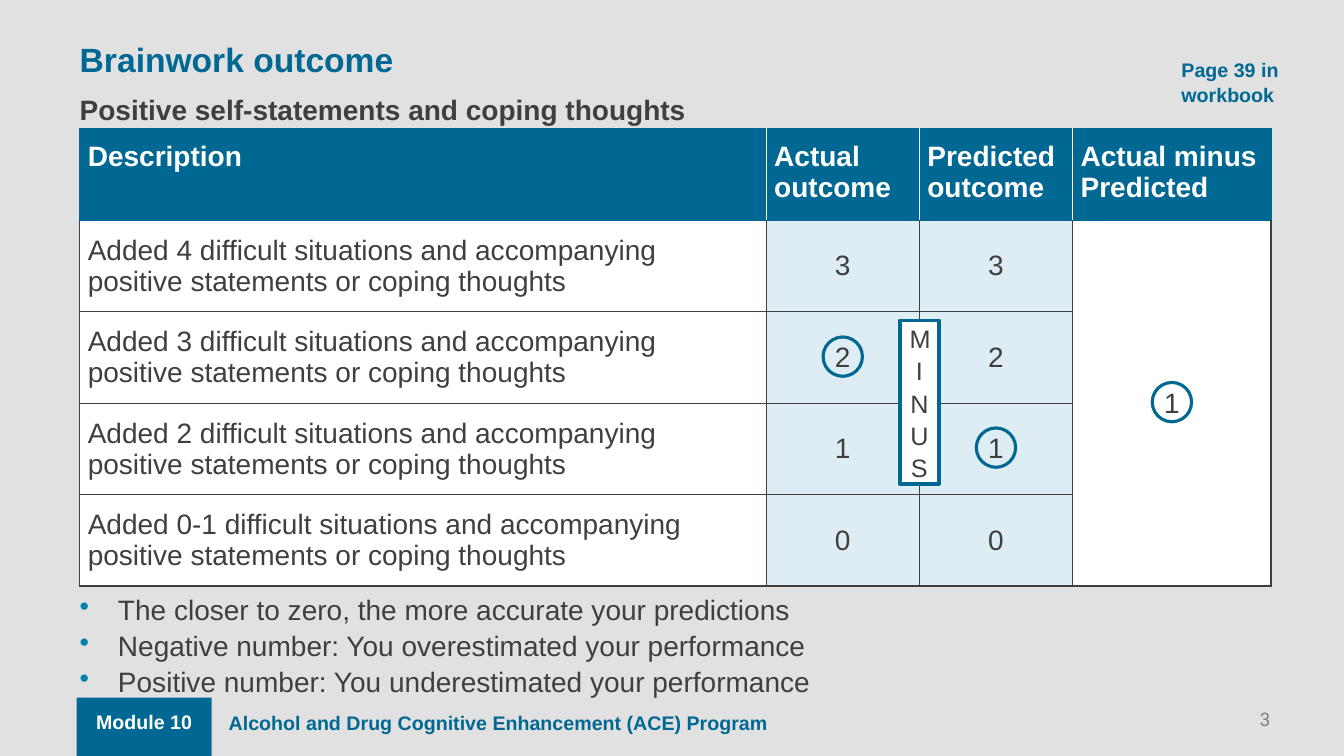
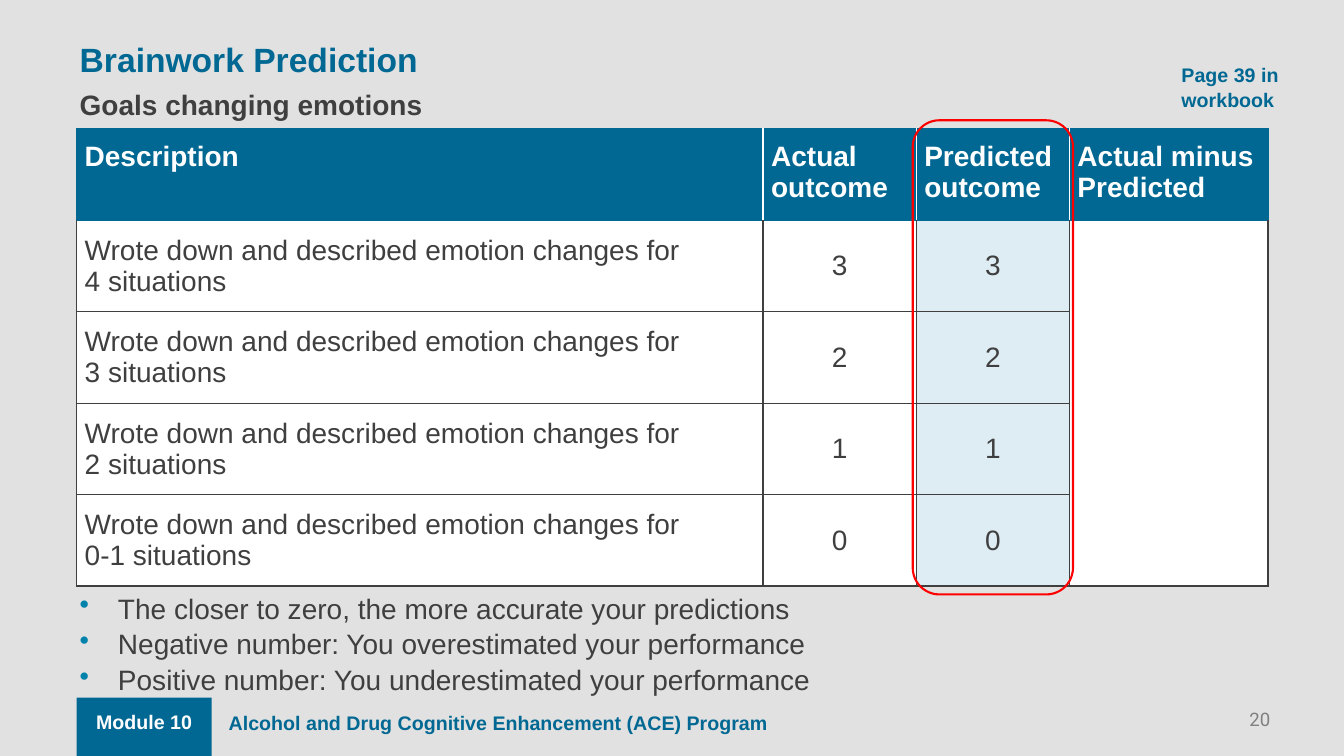
from dataclasses import dataclass
from itertools import accumulate

from lxml import etree
from pptx import Presentation
from pptx.dml.color import RGBColor
from pptx.enum.shapes import MSO_SHAPE as Shape
from pptx.enum.text import MSO_ANCHOR as Anchor, PP_ALIGN as Align
from pptx.oxml.ns import qn
from pptx.util import Inches, Pt

# Shared style
BLUE, BULLET, INK, GREY = "006892", "0082AA", "3F3F3F", "808080"
WHITE, TINT, RED, PAPER = "FFFFFF", "DEEDF3", "FF0000", "E1E1E1"
FONT, NUMBER_FONT = "Arial", "Roboto"
SLIDE_W, SLIDE_H = Inches(13.33), Inches(7.5)
LEFT, BAND_LEFT = 5.93, 5.7  # percent of the slide width
LOOSE = 1.07  # line spacing outside tables
COLUMNS = (6.81, 1.52, 1.52, 1.97)  # relative widths
HEADINGS = ("Description", "Actual outcome", "Predicted outcome",
            "Actual minus Predicted")
ACTUAL, PREDICTED, DIFFERENCE = 1, 2, 3
NOTES = ("The closer to zero, the more accurate your predictions",
         "Negative number: You overestimated your performance",
         "Positive number: You underestimated your performance")


@dataclass
class Box:
    x: int
    y: int
    w: int
    h: int

    def inner(self, x, y, w, h):
        """Sub-box in percent of this box."""
        return Box(int(self.x + self.w * x / 100), int(self.y + self.h * y / 100),
                   int(self.w * w / 100), int(self.h * h / 100))

    def place(self):
        return self.x, self.y, self.w, self.h


PAGE = Box(0, 0, SLIDE_W, SLIDE_H)


def rgb(color):
    return RGBColor.from_string(color)


def add_run(p, text, size, color=INK, bold=False, font=FONT):
    r = p.add_run()
    r.text = text
    r.font.size, r.font.bold, r.font.name = Pt(size), bold, font
    r.font.color.rgb = rgb(color)


def set_margins(target, side, top):
    target.margin_left = target.margin_right = Inches(side)
    target.margin_top = target.margin_bottom = Inches(top)


def add_text(slide, box, text, size, color=INK, bold=False, font=FONT,
             align=Align.LEFT, anchor=Anchor.TOP, margins=(0.1, 0.05), before=0):
    tf = slide.shapes.add_textbox(*box.place()).text_frame
    tf.word_wrap, tf.vertical_anchor = True, anchor
    set_margins(tf, *margins)
    p = tf.paragraphs[0]
    p.alignment, p.line_spacing, p.space_before = align, LOOSE, Pt(before)
    add_run(p, text, size, color, bold, font)


def add_outline(slide, kind, box, line=None, width=0, fill=None):
    sp = slide.shapes.add_shape(kind, *box.place())
    sp.shadow.inherit = False
    if fill:
        sp.fill.solid()
        sp.fill.fore_color.rgb = rgb(fill)
    else:
        sp.fill.background()
    if line:
        sp.line.color.rgb, sp.line.width = rgb(line), Pt(width)
    else:
        sp.line.fill.background()
    return sp


# Header and footer
def add_header(slide, box, title, subtitle, subtitle_y, page_ref_y):
    add_text(slide, box.inner(LEFT, 4.53, 66.9, 6.27), title, 24, BLUE, True,
             anchor=Anchor.MIDDLE, margins=(0, 0), before=8)
    add_text(slide, box.inner(LEFT, subtitle_y, 55, 5.87), subtitle, 20, bold=True,
             margins=(0, 0.05))
    add_text(slide, box.inner(87.17, page_ref_y, 10.35, 7.6), "Page 39 in workbook",
             14, BLUE, True)


def add_footer(slide, box, number):
    add_outline(slide, Shape.RECTANGLE, box.inner(BAND_LEFT, 92.27, 10.05, 7.73),
                fill=BLUE)
    add_text(slide, box.inner(16.28, 93.2, 60, 6.27),
             "Alcohol and Drug Cognitive Enhancement (ACE) Program",
             14, BLUE, True, before=8)
    add_text(slide, box.inner(BAND_LEFT, 93.07, 10.05, 4.53), "Module 10",
             14, WHITE, True, align=Align.CENTER, before=8)
    add_text(slide, box.inner(79.52, 93.47, 15, 2.67), str(number), 13.3, GREY,
             font=NUMBER_FONT, align=Align.RIGHT, margins=(0, 0))


# Bulleted notes
def add_notes(slide, box):
    tf = slide.shapes.add_textbox(*box.place()).text_frame
    tf.word_wrap = True
    set_margins(tf, 0, 0)
    for i, note in enumerate(NOTES):
        p = tf.add_paragraph() if i else tf.paragraphs[0]
        p.line_spacing = LOOSE
        pPr = p._p.get_or_add_pPr()
        pPr.set("marL", str(Inches(0.38)))
        pPr.set("indent", str(-Inches(0.38)))
        bullet_color = etree.SubElement(pPr, qn("a:buClr"))
        etree.SubElement(bullet_color, qn("a:srgbClr"), val=BULLET)
        etree.SubElement(pPr, qn("a:buChar"), char="•")
        add_run(p, note, 20)


# Outcome table
def set_borders(cell, left, right, top, bottom):
    tcPr = cell._tc.get_or_add_tcPr()
    for side, color in zip("LRTB", (left, right, top, bottom)):
        ln = etree.SubElement(tcPr, qn(f"a:ln{side}"), w=str(Pt(1)))
        fill = etree.SubElement(ln, qn("a:solidFill"))
        etree.SubElement(fill, qn("a:srgbClr"), val=color)


def style_cell(cell, row, col, tinted):
    if row == 0:
        set_borders(cell, WHITE if col else BLUE,
                    WHITE if col < DIFFERENCE else BLUE, BLUE, BLUE)
    else:
        set_borders(cell, INK, INK, BLUE if row == 1 else INK, INK)
        cell.vertical_anchor = Anchor.MIDDLE
    set_margins(cell, 0.08, 0.12)
    cell.fill.solid()
    cell.fill.fore_color.rgb = rgb(
        BLUE if row == 0 else TINT if col in tinted else WHITE)


def fill_cell(cell, text, row, col):
    p = cell.text_frame.paragraphs[0]
    p.alignment = Align.CENTER if row and col else Align.LEFT
    for i, line in enumerate(text.split("\n")):
        if i:
            p.add_line_break()
        add_run(p, line, 20, INK if row else WHITE, row == 0)


def add_outcomes(slide, box, descriptions, tinted, difference=""):
    scores = range(len(descriptions) - 1, -1, -1)
    rows = [HEADINGS] + [(d, str(s), str(s), "")
                         for d, s in zip(descriptions, scores)]
    rows[1] = rows[1][:DIFFERENCE] + (difference,)
    table = slide.shapes.add_table(len(rows), len(COLUMNS), *box.place()).table
    table.horz_banding = False
    for column, share in zip(table.columns, COLUMNS):
        column.width = int(box.w * share / sum(COLUMNS))
    for r, texts in enumerate(rows):
        table.rows[r].height = box.h // len(rows)
        for c, text in enumerate(texts):
            cell = table.cell(r, c)
            style_cell(cell, r, c, tinted)
            if text:
                fill_cell(cell, text, r, c)
    table.cell(1, DIFFERENCE).merge(table.cell(len(rows) - 1, DIFFERENCE))


def cell_box(box, col, row, row_span=1):
    edges = [0, *accumulate(COLUMNS)]
    unit = 100 / edges[-1]
    return box.inner(edges[col] * unit, row * 20, COLUMNS[col] * unit, row_span * 20)


def centred(x, y, w, h):
    return Box(int(x - w / 2), int(y - h / 2), w, h)


# Marks over the table
def add_circle(slide, cell):
    size = Inches(0.39)
    add_outline(slide, Shape.OVAL,
                centred(cell.x + cell.w / 2, cell.y + cell.h / 2, size, size),
                BLUE, 2.25)


def add_minus(slide, cells):
    sp = add_outline(slide, Shape.RECTANGLE,
                     centred(cells.x, cells.y + cells.h / 2, Inches(0.39), Inches(1.62)),
                     BLUE, 2.75, WHITE)
    tf = sp.text_frame
    tf.word_wrap, tf.vertical_anchor = True, Anchor.MIDDLE
    p = tf.paragraphs[0]
    p.alignment, p.line_spacing = Align.CENTER, LOOSE
    add_run(p, "MINUS", 18)


def outcome_slide(prs):
    slide = prs.slides.add_slide(prs.slide_layouts[6])
    add_footer(slide, PAGE, 3)
    grid = PAGE.inner(LEFT, 17.07, 88.65, 60.2)
    add_outcomes(slide, grid,
                 [f"Added {n} difficult situations and accompanying "
                  "positive statements or coping thoughts"
                  for n in ("4", "3", "2", "0-1")],
                 (ACTUAL, PREDICTED), "1")
    add_header(slide, PAGE, "Brainwork outcome",
               "Positive self-statements and coping thoughts", 11.33, 6.8)
    add_notes(slide, PAGE.inner(LEFT, 78.13, 88.6, 15.33))
    for place in ((ACTUAL, 2), (PREDICTED, 3), (DIFFERENCE, 1, 4)):
        add_circle(slide, cell_box(grid, *place))
    add_minus(slide, cell_box(grid, PREDICTED, 2, 2))


def prediction_slide(prs):
    slide = prs.slides.add_slide(prs.slide_layouts[6])
    add_footer(slide, PAGE, 20)
    grid = PAGE.inner(BAND_LEFT, 17.07, 88.65, 57.7)
    add_header(slide, PAGE, "Brainwork Prediction", "Goals changing emotions",
               10.67, 7.47)
    add_notes(slide, PAGE.inner(LEFT, 77.87, 88.6, 15.33))
    add_outcomes(slide, grid,
                 [f"Wrote down and described emotion changes for\n{n} situations"
                  for n in ("4", "3", "2", "0-1")],
                 (PREDICTED,))
    # Frame around the predicted column
    column = cell_box(grid, PREDICTED, 0, 5)
    add_outline(slide, Shape.ROUNDED_RECTANGLE,
                column.inner(-2.3, -2, 104.6, 108.7), RED, 1.5)


def main():
    prs = Presentation()
    prs.slide_width, prs.slide_height = SLIDE_W, SLIDE_H
    fill = prs.slide_master.background.fill
    fill.solid()
    fill.fore_color.rgb = rgb(PAPER)
    outcome_slide(prs)
    prediction_slide(prs)
    prs.save("out.pptx")


if __name__ == "__main__":
    main()
